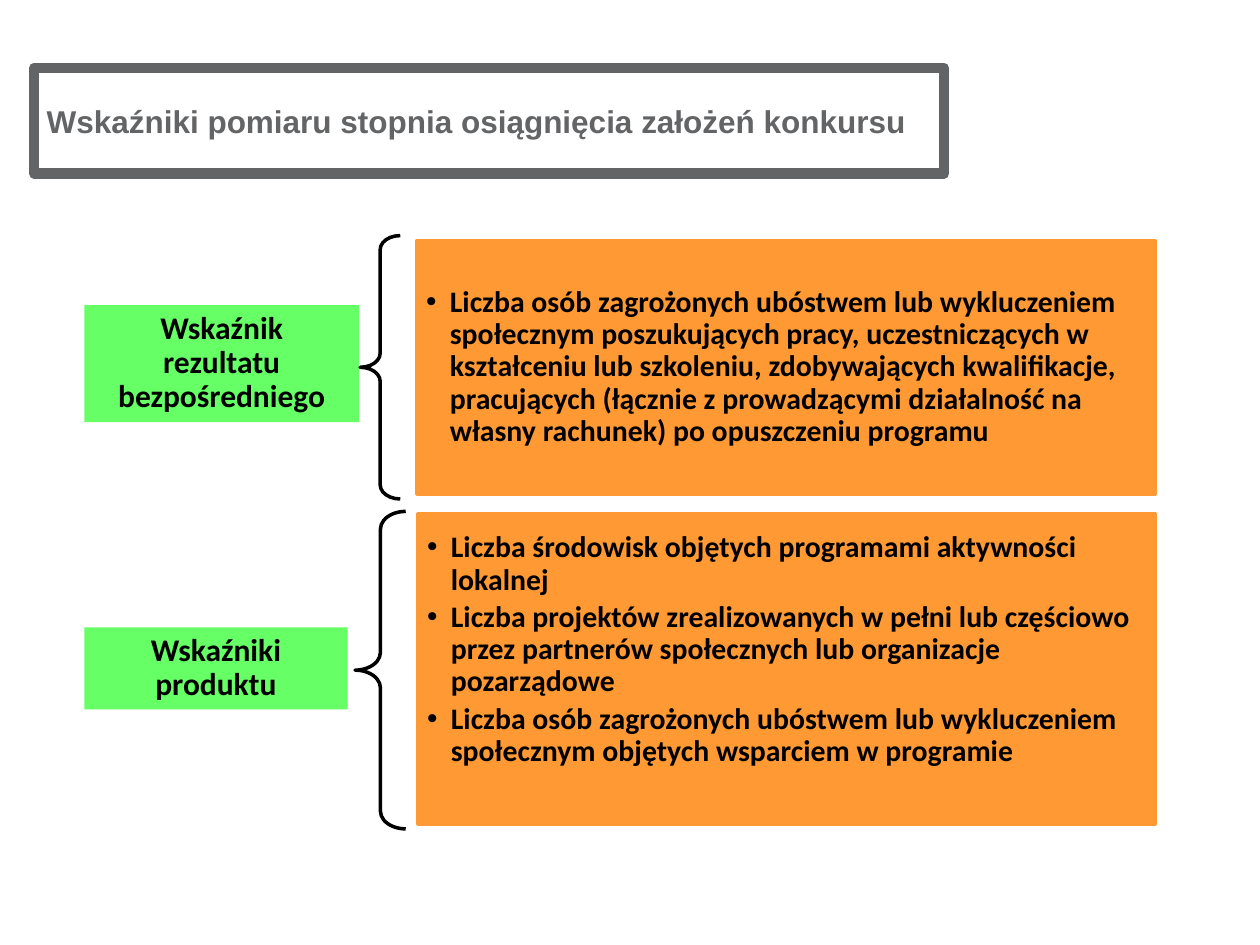
from lxml.etree import SubElement
from pptx import Presentation
from pptx.dml.color import RGBColor
from pptx.enum.shapes import MSO_SHAPE
from pptx.enum.text import MSO_ANCHOR, MSO_AUTO_SIZE, PP_ALIGN
from pptx.oxml.ns import qn
from pptx.util import Cm, Pt

GREY, GREEN, ORANGE, BLACK = "636466", "66FF66", "FF9933", "000000"
TITLE = "Wskaźniki pomiaru stopnia osiągnięcia założeń konkursu"
GROUPS = [
    {
        "label": "Wskaźnik rezultatu bezpośredniego",
        "label_place": (1.7, 6.15, 5.54, 2.36),
        "brace_place": (7.26, 4.75, 0.81, 5.31),
        "list_place": (8.41, 4.85, 14.88, 5.11),
        "list_bottom": 0.18,
        "indicators": [
            "Liczba osób zagrożonych ubóstwem lub wykluczeniem społecznym "
            "poszukujących pracy, uczestniczących w kształceniu lub szkoleniu, "
            "zdobywających kwalifikacje, pracujących (łącznie z prowadzącymi "
            "działalność na własny rachunek) po opuszczeniu programu",
        ],
    },
    {
        "label": "Wskaźniki produktu",
        "label_place": (1.7, 12.65, 5.31, 1.65),
        "brace_place": (7.16, 10.31, 1.02, 6.4),
        "list_place": (8.43, 10.36, 14.86, 6.25),
        "list_bottom": 0.94,
        "indicators": [
            "Liczba środowisk objętych programami aktywności lokalnej",
            "Liczba projektów zrealizowanych w pełni lub częściowo przez "
            "partnerów społecznych lub organizacje pozarządowe",
            "Liczba osób zagrożonych ubóstwem lub wykluczeniem społecznym "
            "objętych wsparciem w programie",
        ],
    },
]


def color(value):
    return RGBColor.from_string(value)


def apply(target, **formats):
    for name, value in formats.items():
        setattr(target, name, value)


def paint(shape, fill=None, line=None, width=2):
    if fill:
        shape.fill.solid()
        shape.fill.fore_color.rgb = color(fill)
    else:
        shape.fill.background()
    if line:
        shape.line.color.rgb = color(line)
        shape.line.width = Pt(width)
    else:
        shape.line.fill.background()


def add_shape(page, kind, place, **paints):
    shape = page.shapes.add_shape(kind, *map(Cm, place))
    shape.shadow.inherit = False
    paint(shape, **paints)
    return shape


def add_bullet(para):
    properties = para._p.get_or_add_pPr()
    properties.set("marL", str(Cm(0.48)))
    properties.set("indent", str(Cm(-0.48)))
    SubElement(properties, qn("a:buFont"), typeface="Arial")
    SubElement(properties, qn("a:buChar"), char="•")


def write(shape, texts, insets, size, face="Calibri", ink=BLACK,
          align=PP_ALIGN.LEFT, spacing=0.9, bullets=False):
    left, top, right, bottom = map(Cm, insets)
    frame = shape.text_frame
    apply(frame, margin_left=left, margin_top=top, margin_right=right,
          margin_bottom=bottom, word_wrap=True, auto_size=MSO_AUTO_SIZE.NONE,
          vertical_anchor=MSO_ANCHOR.MIDDLE)
    for index, text in enumerate(texts):
        para = frame.add_paragraph() if index else frame.paragraphs[0]
        if bullets:
            add_bullet(para)
        apply(para, alignment=align, line_spacing=spacing,
              space_before=Pt(3 if index else 0))
        span = para.add_run()
        span.text = text
        apply(span.font, name=face, size=Pt(size), bold=True)
        span.font.color.rgb = color(ink)


def add_group(page, group):
    label = add_shape(page, MSO_SHAPE.RECTANGLE, group["label_place"], fill=GREEN)
    write(label, [group["label"]], (0.36, 0.13, 0.36, 0.13), 18,
          align=PP_ALIGN.CENTER)
    brace = add_shape(page, MSO_SHAPE.LEFT_BRACE, group["brace_place"], line=BLACK)
    brace.adjustments[0] = 0.35
    box = add_shape(page, MSO_SHAPE.RECTANGLE, group["list_place"],
                    fill=ORANGE, line=ORANGE)
    write(box, group["indicators"], (0.18, 0.18, 0.18, group["list_bottom"]), 17,
          bullets=True)


def main():
    deck = Presentation()
    apply(deck, slide_width=Cm(25.4), slide_height=Cm(19.05))
    page = deck.slides.add_slide(deck.slide_layouts[5])
    title = page.shapes.title
    apply(title, left=Cm(0.69), top=Cm(1.37), width=Cm(18.34), height=Cm(2.13))
    paint(title, line=GREY, width=6)
    write(title, [TITLE], (0.25, 0.13, 0.25, 0.13), 18, face="Arial", ink=GREY,
          spacing=1.0)
    for group in GROUPS:
        add_group(page, group)
    deck.save("out.pptx")


if __name__ == "__main__":
    main()
